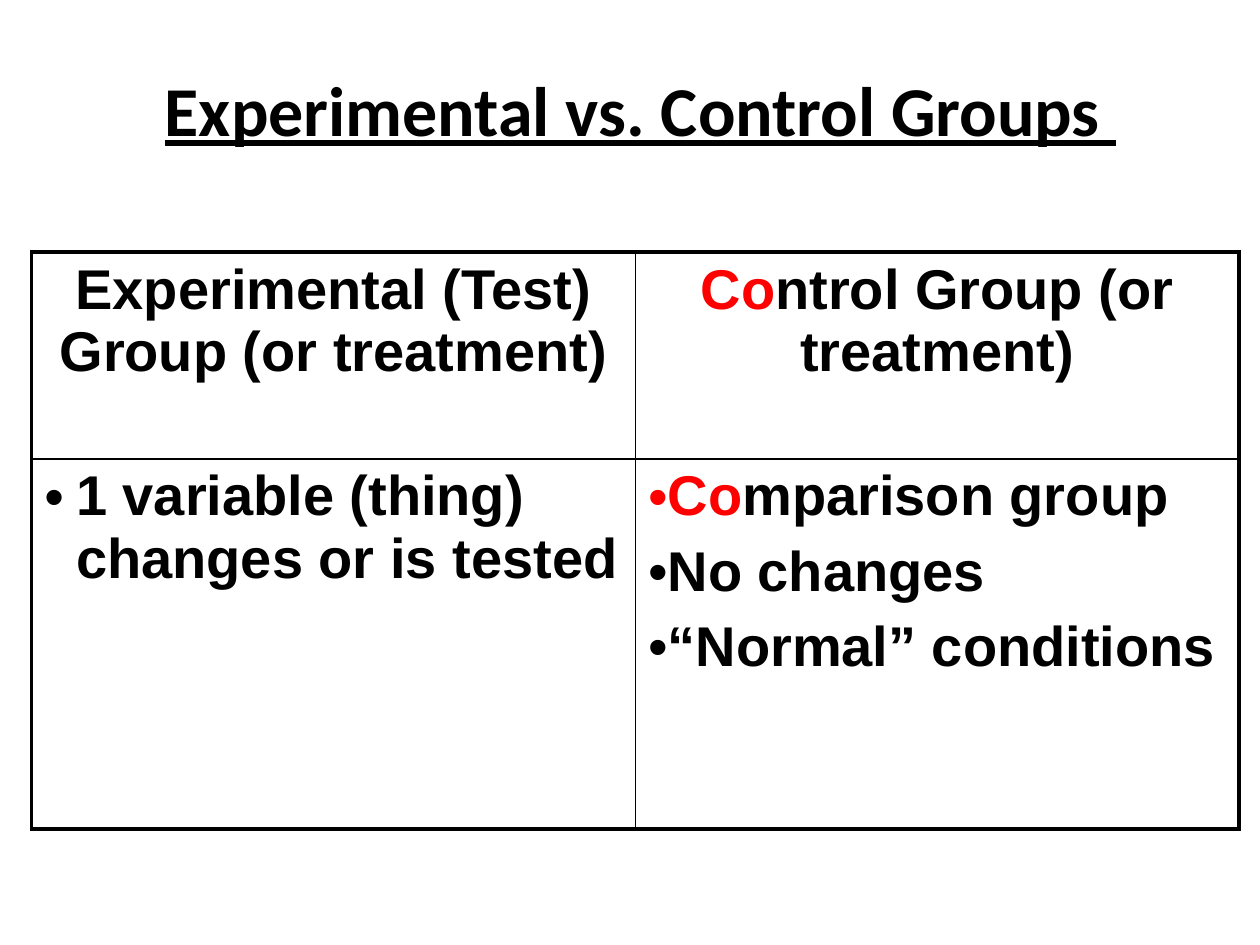
from dataclasses import dataclass
from pptx import Presentation
from pptx.dml.color import RGBColor as Rgb
from pptx.enum.text import MSO_ANCHOR as Anchor, PP_ALIGN as Align
from pptx.oxml.ns import qn
from pptx.util import Cm, Pt
from lxml.etree import SubElement as Sub


@dataclass(frozen=True)
class Theme:
    ink: str = "000000"
    red: str = "FF0000"
    head: str = "Calibri"
    body: str = "Arial"
    big: float = 40
    mid: float = 32
    gap: float = 7
    thin: float = 1
    thick: float = 2.25


class Deck:
    def __init__(self, theme):
        self.theme = theme
        self.prs = Presentation()
        self.prs.slide_width, self.prs.slide_height = Cm(25.4), Cm(19.05)
        self.slide = self.prs.slides.add_slide(self.prs.slide_layouts[6])

    def style(self, run, face, size, color):
        font = run.font
        font.name, font.size, font.bold = face, Pt(size), True
        font.color.rgb = Rgb.from_string(color)

    def title(self, text, x, y, w, h):
        frame = self.slide.shapes.add_textbox(Cm(x), Cm(y), Cm(w), Cm(h)).text_frame
        frame.word_wrap = True
        frame.vertical_anchor = Anchor.MIDDLE
        frame.text = text
        para = frame.paragraphs[0]
        para.alignment = Align.CENTER
        run = para.runs[0]
        self.style(run, self.theme.head, self.theme.big, self.theme.ink)
        run.font.underline = True

    def bullet(self, para, indent):
        props = para._p.get_or_add_pPr()
        props.set("marL", str(Cm(indent)))
        props.set("indent", str(-Cm(indent)))
        Sub(props, qn("a:buFont"), typeface=self.theme.body)
        Sub(props, qn("a:buChar"), char="•")

    def border(self, cell, widths):
        props = cell._tc.get_or_add_tcPr()
        for side, width in zip("LRTB", widths):
            line = Sub(props, qn(f"a:ln{side}"), w=str(Pt(width)))
            fill = Sub(line, qn("a:solidFill"))
            Sub(fill, qn("a:srgbClr"), val=self.theme.ink)

    def fill(self, cell, lines, indent):
        """Write lines of (red lead, rest); an indent of None means centred."""
        frame = cell.text_frame
        for i, parts in enumerate(lines):
            para = frame.add_paragraph() if i else frame.paragraphs[0]
            para.space_before = Pt(self.theme.gap if i else 0)
            if indent is None:
                para.alignment = Align.CENTER
            else:
                self.bullet(para, indent)
            for text, color in zip(parts, (self.theme.red, self.theme.ink)):
                if text:
                    run = para.add_run()
                    run.text = text
                    self.style(run, self.theme.body, self.theme.mid, color)

    def table(self, cells, x, y, wide, tall):
        rows, cols = len(tall), len(wide)
        grid = self.slide.shapes.add_table(
            rows, cols, Cm(x), Cm(y), Cm(sum(wide)), Cm(sum(tall))).table
        grid.first_row = grid.horz_banding = False
        for col, width in zip(grid.columns, wide):
            col.width = Cm(width)
        for row, height in zip(grid.rows, tall):
            row.height = Cm(height)
        for r, row in enumerate(cells):
            for c, (lines, indent) in enumerate(row):
                cell = grid.cell(r, c)
                self.fill(cell, lines, indent)
                # Thick on the outer edges, thin inside
                outer = (c == 0, c == cols - 1, r == 0, r == rows - 1)
                self.border(cell, [self.theme.thick if edge else self.theme.thin
                                   for edge in outer])
                cell.fill.background()

    def save(self):
        self.prs.save("out.pptx")


def main():
    deck = Deck(Theme())

    # Heading
    deck.title("Experimental vs. Control Groups ", 1.48, 1.06, 22.86, 2.24)

    # Comparison of the two groups
    cells = [
        [([("", "Experimental (Test) Group (or treatment)")], None),
         ([("Co", "ntrol Group (or treatment)")], None)],
        [([("", "1 variable (thing) changes or is tested")], 0.64),
         ([("Co", "mparison group"),
           ("", "No changes"),
           ("", "“Normal” conditions")], 0)],
    ]
    deck.table(cells, 0.64, 5.08, [12.17] * 2, [4.17, 7.46])

    deck.save()


if __name__ == "__main__":
    main()
